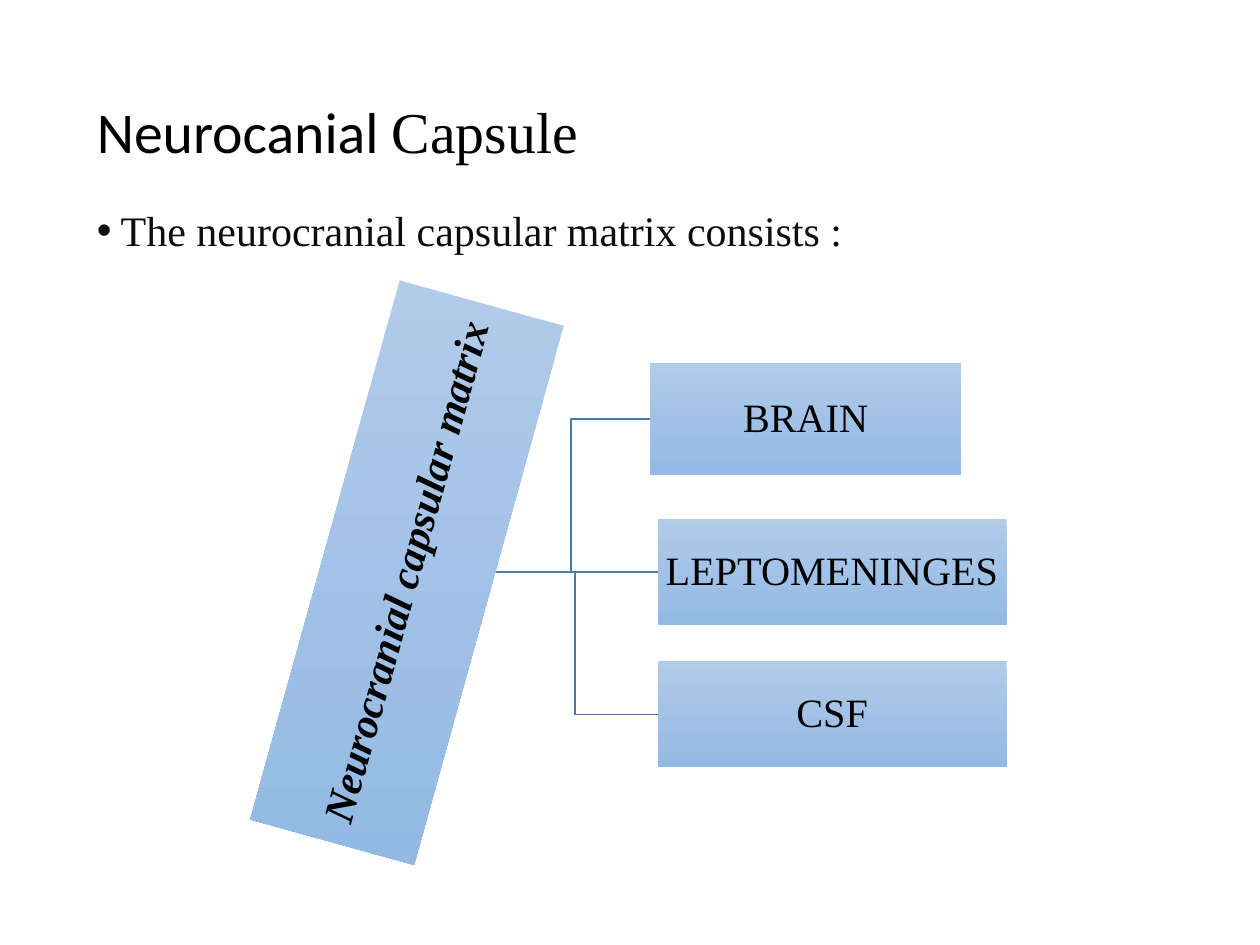
from dataclasses import dataclass

import pptx
import pptx.dml.color
import pptx.enum.shapes
import pptx.enum.text
import pptx.oxml.ns
import pptx.oxml.xmlchemy
import pptx.util
from pptx.util import Inches

SERIF = "Times New Roman"
LINE = "497CAB"
GRADIENT = ("B1CBE9", "93B9E4")
TRUNK_X, TRUNK_Y = 3.91, 4.54
ALIGN = pptx.enum.text.PP_ALIGN
ANCHOR = pptx.enum.text.MSO_ANCHOR
qn = pptx.oxml.ns.qn


@dataclass
class Box:
    text: str
    left: float
    top: float
    width: float
    height: float
    size: float = 23
    rotation: float = 0
    emphasis: bool = False

    @property
    def middle(self) -> float:
        return self.top + self.height / 2


def rgb(value: str) -> pptx.dml.color.RGBColor:
    return pptx.dml.color.RGBColor.from_string(value)


def add_text(p, text, *, size, font=SERIF, color="000000", emphasis=False,
             align=ALIGN.LEFT) -> None:
    p.alignment = align
    p.line_spacing = 0.9
    r = p.add_run()
    r.text = text
    r.font.name = font
    r.font.size = pptx.util.Pt(size)
    r.font.color.rgb = rgb(color)
    r.font.bold = r.font.italic = emphasis


def add_frame(s, left: float, top: float, width: float, height: float, anchor):
    tf = s.shapes.add_textbox(*map(Inches, (left, top, width, height))).text_frame
    tf.word_wrap = True
    tf.vertical_anchor = anchor
    return tf


def add_bullet(p) -> None:
    pPr = p._p.get_or_add_pPr()
    pPr.set("marL", str(Inches(0.19)))
    pPr.set("indent", str(-Inches(0.19)))
    pPr.append(pptx.oxml.parse_xml(
        f'<a:buFont {pptx.oxml.ns.nsdecls("a")} typeface="Arial"/>'))
    pPr.append(pptx.oxml.parse_xml(
        f'<a:buChar {pptx.oxml.ns.nsdecls("a")} char="•"/>'))


def add_box(s, box: Box):
    sp = s.shapes.add_shape(
        pptx.enum.shapes.MSO_SHAPE.RECTANGLE,
        *map(Inches, (box.left, box.top, box.width, box.height)))
    sp.rotation = box.rotation
    sp.shadow.inherit = False
    sp.line.fill.background()
    sp.fill.gradient()
    sp.fill.gradient_angle = 270
    for stop, color in zip(sp.fill.gradient_stops, GRADIENT):
        stop.color.rgb = rgb(color)
    sp._element.spPr.find(qn("a:gradFill")).set("rotWithShape", "0")
    tf = sp.text_frame
    tf.word_wrap = True
    tf.vertical_anchor = ANCHOR.MIDDLE
    tf.margin_left = tf.margin_right = Inches(0.02)
    tf.margin_top = tf.margin_bottom = Inches(0.02)
    add_text(tf.paragraphs[0], box.text, size=box.size,
             emphasis=box.emphasis, align=ALIGN.CENTER)
    return sp


def style_line(sp) -> None:
    sp.line.color.rgb = rgb(LINE)
    sp.line.width = pptx.util.Pt(1)


def add_straight(s, box: Box, target) -> None:
    cxn = s.shapes.add_connector(
        pptx.enum.shapes.MSO_CONNECTOR.STRAIGHT,
        *map(Inches, (TRUNK_X, TRUNK_Y, box.left, box.middle)))
    cxn.end_connect(target, 1)
    style_line(cxn)
    cxn._element.spPr.append(pptx.oxml.parse_xml(
        f'<a:effectLst {pptx.oxml.ns.nsdecls("a")}/>'))


def add_elbow(s, box: Box) -> None:
    bend = (TRUNK_X + box.left) / 2
    points = [(bend, TRUNK_Y), (bend, box.middle), (box.left, box.middle)]
    builder = s.shapes.build_freeform(Inches(TRUNK_X), Inches(TRUNK_Y))
    builder.add_line_segments(
        [(Inches(x), Inches(y)) for x, y in points], close=False)
    sp = builder.convert_to_shape()
    sp.shadow.inherit = False
    sp.fill.background()
    style_line(sp)


def main() -> None:
    prs = pptx.Presentation()
    prs.slide_width, prs.slide_height = Inches(10), Inches(7.5)
    s = prs.slides.add_slide(prs.slide_layouts[6])

    p = add_frame(s, 0.67, 0.67, 6.94, 0.8, ANCHOR.MIDDLE).paragraphs[0]
    add_text(p, "Neurocanial ", size=33, font="Calibri")
    add_text(p, "Capsule", size=33)

    p = add_frame(s, 0.67, 1.62, 7.33, 0.6, ANCHOR.TOP).paragraphs[0]
    add_text(p, "The neurocranial capsular matrix consists :", size=24, color="0D0D0D")
    p.space_before = pptx.util.Pt(7.5)
    add_bullet(p)

    branches = [
        Box("BRAIN", 5.16, 2.88, 2.47, 0.89),
        Box("LEPTOMENINGES", 5.22, 4.12, 2.77, 0.84),
        Box("CSF", 5.22, 5.25, 2.77, 0.84),
    ]
    for box in branches:
        sp = add_box(s, box)
        if abs(box.middle - TRUNK_Y) < 0.01:
            add_straight(s, box, sp)
        else:
            add_elbow(s, box)
    add_box(s, Box("Neurocranial capsular matrix", 1.01, 3.87, 4.44, 1.35,
                   size=24, rotation=285.5, emphasis=True))

    prs.save("out.pptx")


if __name__ == "__main__":
    main()
